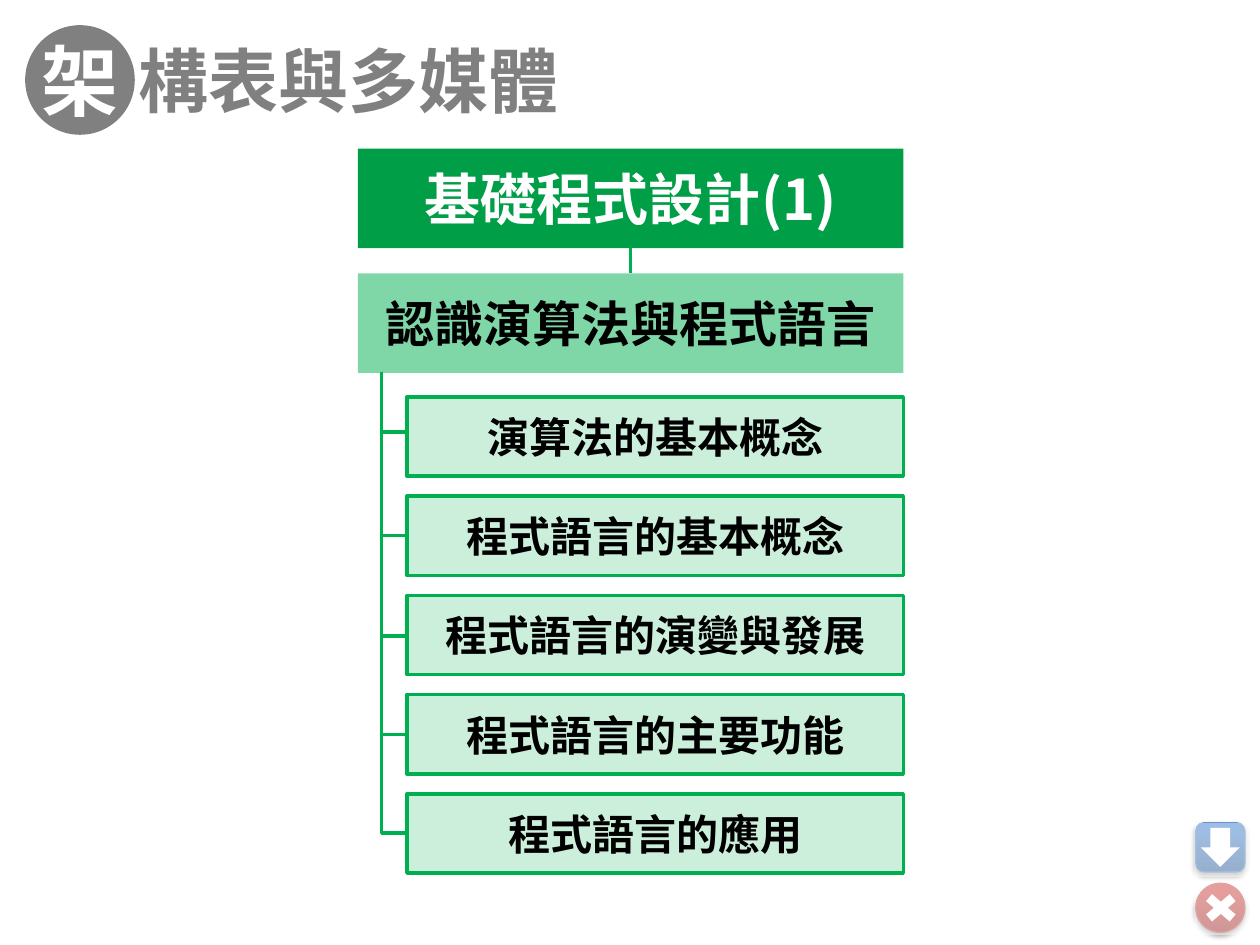
"""Build the course structure slide: a unit, its chapter and five linked topics."""
from dataclasses import dataclass

from lxml import etree
from pptx import Presentation
from pptx.dml.color import RGBColor
from pptx.enum import shapes, text
from pptx.oxml import ns
from pptx.util import Inches, Pt

PRESET = shapes.MSO_SHAPE


@dataclass(frozen=True)
class Theme:
    white: str = "FFFFFF"
    black: str = "000000"
    grey: str = "808080"
    green: str = "00B050"
    dark_green: str = "009E47"
    cjk: str = "Noto Sans CJK SC"
    latin: str = "Lato"
    initial_size: int = 44
    title_size: int = 40
    unit_size: int = 32
    chapter_size: int = 28
    topic_size: int = 24
    link_width: float = 2
    button_line: float = 0.75


@dataclass(frozen=True)
class Label:
    words: str
    size: int
    color: str
    font: str = Theme.cjk
    inset: float = 0.1


@dataclass(frozen=True)
class Block:
    left: float
    top: float
    width: float
    height: float
    fill: str
    opacity: int = 100
    line: str | None = None
    label: Label | None = None
    preset: int = PRESET.RECTANGLE


@dataclass(frozen=True)
class Topic:
    words: str
    link_y: float


@dataclass(frozen=True)
class Button:
    top: float
    preset: int
    stops: tuple[str, str, str]
    line: str
    icon: Block


THEME = Theme()
TOPICS = (
    Topic("演算法的基本概念", 3.43),
    Topic("程式語言的基本概念", 4.25),
    Topic("程式語言的演變與發展", 5.05),
    Topic("程式語言的主要功能", 5.83),
    Topic("程式語言的應用", 6.61),
)
BUTTONS = (
    Button(6.53, PRESET.ROUNDED_RECTANGLE, ("2F5F99", "3D7CC7", "3A7CCB"), "4B7EBC",
           Block(9.53, 6.57, 0.31, 0.31, THEME.white, preset=PRESET.DOWN_ARROW)),
    Button(7.01, PRESET.OVAL, ("9C2F2D", "CB3E3A", "CE3B37"), "BF4C48",
           Block(9.51, 7.05, 0.36, 0.31, THEME.white, preset=PRESET.MATH_MULTIPLY)),
)
VEIL_TOPS = (6.53, 6.99)
CHART_LEFT, CHART_WIDTH, HEAD_HEIGHT = 2.84, 4.33, 0.79
UNIT_TOP, CHAPTER_TOP = 1.18, 2.17
TRUNK_X, TRUNK_TOP = 3.03, 2.95
TOPIC_LEFT, TOPIC_TOP, TOPIC_STEP = 3.23, 3.15, 0.7875
TOPIC_WIDTH, TOPIC_HEIGHT = 3.94, 0.63


def rgb(color: str) -> RGBColor:
    """Turn a hex string into a colour."""
    return RGBColor.from_string(color)


def add_xml(parent, tag: str, **attributes):
    """Append a DrawingML element and return it."""
    return etree.SubElement(parent, ns.qn(f"a:{tag}"), attributes)


def write(frame, label: Label, align) -> None:
    """Put one formatted run into a text frame."""
    frame.vertical_anchor = text.MSO_ANCHOR.MIDDLE
    frame.margin_left = frame.margin_right = Inches(label.inset)
    frame.margin_top = frame.margin_bottom = Inches(0.04)
    paragraph = frame.paragraphs[0]
    paragraph.alignment = align
    run = paragraph.add_run()
    run.text = label.words
    run.font.size, run.font.bold = Pt(label.size), True
    run.font.color.rgb = rgb(label.color)
    run.font.name = label.font
    add_xml(run.font._element, "ea", typeface=THEME.cjk)


def draw_block(slide, block: Block):
    """Draw a filled preset shape with its optional outline and label."""
    shape = slide.shapes.add_shape(
        block.preset, *map(Inches, (block.left, block.top, block.width, block.height)))
    shape.shadow.inherit = False
    shape.fill.solid()
    shape.fill.fore_color.rgb = rgb(block.fill)
    if block.opacity < 100:
        color = shape.element.spPr.find(f"{ns.qn('a:solidFill')}/{ns.qn('a:srgbClr')}")
        add_xml(color, "alpha", val=str(block.opacity * 1000))
    if block.line:
        shape.line.color.rgb = rgb(block.line)
        shape.line.width = Pt(THEME.link_width)
    else:
        shape.line.fill.background()
    if block.label:
        shape.text_frame.word_wrap = False
        write(shape.text_frame, block.label, text.PP_ALIGN.CENTER)
    return shape


def draw_button(slide, button: Button) -> None:
    """Draw a glossy navigation button with its icon."""
    face = draw_block(slide, Block(9.49, button.top, 0.39, 0.39, button.stops[0],
                                   preset=button.preset))
    face.line.color.rgb = rgb(button.line)
    face.line.width = Pt(THEME.button_line)
    properties = face.element.spPr
    gradient = etree.Element(ns.qn("a:gradFill"), rotWithShape="1")
    stops = add_xml(gradient, "gsLst")
    for position, color in zip((0, 80, 100), button.stops):
        add_xml(add_xml(stops, "gs", pos=str(position * 1000)), "srgbClr", val=color)
    add_xml(gradient, "lin", ang=str(270 * 60000), scaled="0")
    properties.replace(properties.find(ns.qn("a:solidFill")), gradient)
    shadow = add_xml(properties.find(ns.qn("a:effectLst")), "outerShdw",
                     blurRad=str(Pt(3.1)), dist=str(Pt(1.8)), dir=str(90 * 60000),
                     rotWithShape="0")
    add_xml(add_xml(shadow, "srgbClr", val=THEME.black), "alpha", val="35000")
    draw_block(slide, button.icon)


def draw_branch(slide, y: float) -> None:
    """Draw an elbow from the chapter down to a topic."""
    builder = slide.shapes.build_freeform(Inches(TRUNK_X), Inches(TRUNK_TOP))
    builder.add_line_segments(
        [(Inches(TRUNK_X), Inches(y)), (Inches(TOPIC_LEFT), Inches(y))], close=False)
    branch = builder.convert_to_shape()
    branch.shadow.inherit = False
    branch.fill.background()
    branch.line.color.rgb = rgb(THEME.green)
    branch.line.width = Pt(THEME.link_width)


def draw_stem(slide) -> None:
    """Join the unit to its chapter."""
    x = Inches(CHART_LEFT + CHART_WIDTH / 2)
    stem = slide.shapes.add_connector(shapes.MSO_CONNECTOR.STRAIGHT, x,
                                      Inches(UNIT_TOP + HEAD_HEIGHT), x, Inches(CHAPTER_TOP))
    stem.line.color.rgb = rgb(THEME.green)
    stem.line.width = Pt(THEME.link_width)
    add_xml(stem.element.spPr, "effectLst")


def draw_title(slide) -> None:
    """Draw the round initial and the rest of the title."""
    draw_block(slide, Block(0.2, 0.2, 0.87, 0.87, THEME.grey, preset=PRESET.OVAL,
                            label=Label("架", THEME.initial_size, THEME.white)))
    title = slide.shapes.title
    title.left, title.top, title.width, title.height = map(Inches, (0.98, 0.2, 3.94, 0.87))
    title.text_frame.word_wrap = True
    write(title.text_frame, Label("構表與多媒體", THEME.title_size, THEME.grey, inset=0.12),
          text.PP_ALIGN.LEFT)


def main() -> None:
    """Build and save the slide."""
    deck = Presentation()
    deck.slide_width, deck.slide_height = Inches(10), Inches(7.5)
    slide = deck.slides.add_slide(deck.slide_layouts[5])
    for button in BUTTONS:
        draw_button(slide, button)
    for top in VEIL_TOPS:
        draw_block(slide, Block(9.48, top, 0.43, 0.43, THEME.white, 50))
    draw_title(slide)
    for topic in TOPICS:
        draw_branch(slide, topic.link_y)
    draw_stem(slide)
    draw_block(slide, Block(CHART_LEFT, UNIT_TOP, CHART_WIDTH, HEAD_HEIGHT, THEME.dark_green,
                            label=Label("基礎程式設計(1)", THEME.unit_size, THEME.white, inset=0.04)))
    draw_block(slide, Block(CHART_LEFT, CHAPTER_TOP, CHART_WIDTH, HEAD_HEIGHT, THEME.green, 50,
                            label=Label("認識演算法與程式語言", THEME.chapter_size, THEME.black)))
    for row, topic in enumerate(TOPICS):
        draw_block(slide, Block(TOPIC_LEFT, TOPIC_TOP + row * TOPIC_STEP, TOPIC_WIDTH,
                                TOPIC_HEIGHT, THEME.green, 20, THEME.green,
                                Label(topic.words, THEME.topic_size, THEME.black, THEME.latin)))
    deck.save("out.pptx")


if __name__ == "__main__":
    main()
